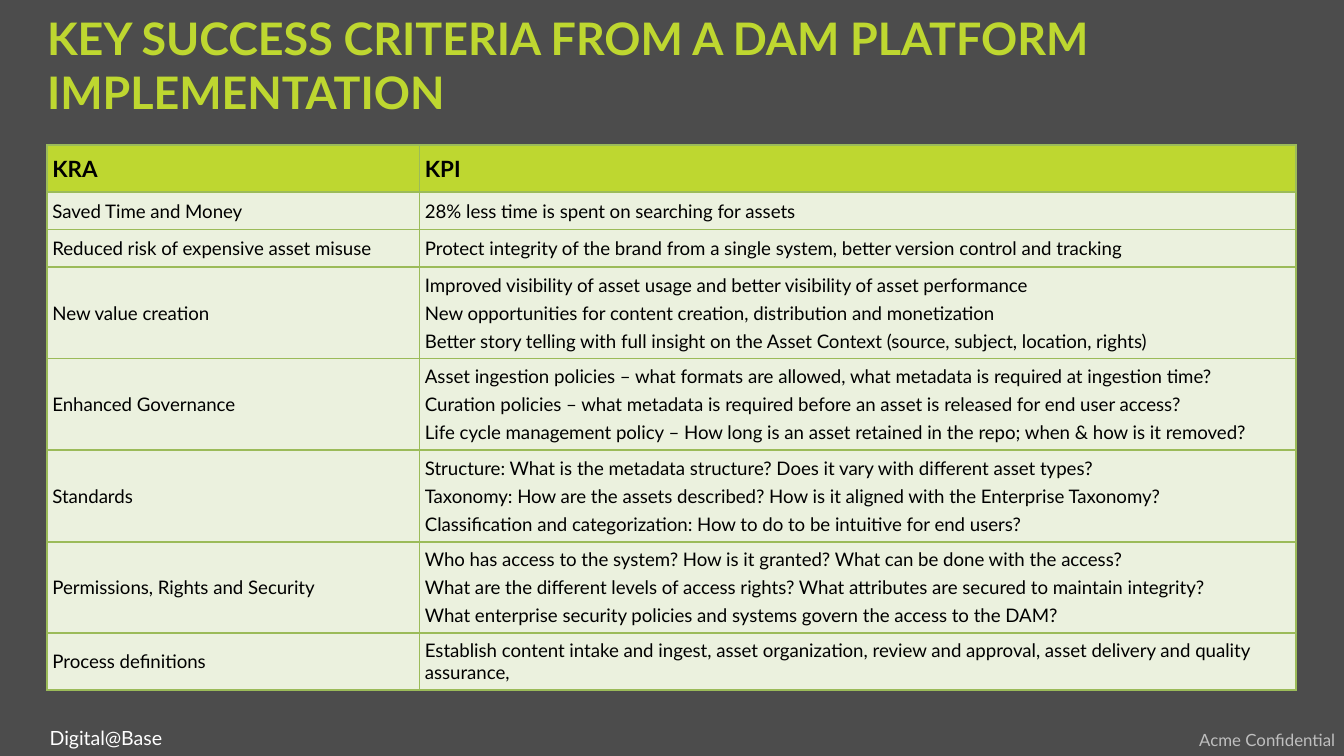
import pptx
import pptx.dml.color
import pptx.enum.shapes
import pptx.enum.text
import pptx.oxml
import pptx.oxml.ns
import pptx.util
from pptx.util import Cm

ALIGN = pptx.enum.text.PP_ALIGN
ANCHOR = pptx.enum.text.MSO_ANCHOR
WIDTH, HEIGHT = 25.4, 14.29
LIME, PALE, BORDER = "BED730", "EBF1DE", "9BBB59"


def color(code):
    return pptx.dml.color.RGBColor.from_string(code)


def xml(text):
    return pptx.oxml.parse_xml(text.replace(">", " " + pptx.oxml.ns.nsdecls("a") + ">", 1))


class Painter:
    """Holds the style and the current slide."""

    font = "Lato"

    def __init__(self, page):
        self.page = page

    def style(self, para, size, code, bold=False, align=ALIGN.LEFT):
        para.alignment = align
        para.font.name = self.font
        para.font.size = pptx.util.Pt(size)
        para.font.bold = bold
        para.font.color.rgb = color(code)

    def backdrop(self, code, opacity):
        shape = self.page.shapes.add_shape(
            pptx.enum.shapes.MSO_SHAPE.RECTANGLE, 0, 0, Cm(WIDTH), Cm(HEIGHT))
        shape.shadow.inherit = False
        shape.line.fill.background()
        shape.fill.solid()
        shape.fill.fore_color.rgb = color(code)
        tint = shape.fill._xPr.find(".//" + pptx.oxml.ns.qn("a:srgbClr"))
        tint.append(xml(f'<a:alpha val="{opacity * 1000}"></a:alpha>'))

    def text(self, words, left, top, width, height, size, code,
             bold=False, align=ALIGN.LEFT, anchor=ANCHOR.TOP, inset=0.25):
        box = self.page.shapes.add_textbox(Cm(left), Cm(top), Cm(width), Cm(height))
        frame = box.text_frame
        frame.word_wrap = True
        frame.vertical_anchor = anchor
        frame.margin_left = Cm(inset)
        para = frame.paragraphs[0]
        para.text = words
        self.style(para, size, code, bold, align)

    def cell(self, cell, lines, fill, size, bold=False, after=0):
        cell.vertical_anchor = ANCHOR.MIDDLE
        cell.margin_left = cell.margin_right = Cm(0.1)
        cell.margin_top = cell.margin_bottom = Cm(0.1)
        cell.text = "\n".join(lines)
        for para in cell.text_frame.paragraphs:
            self.style(para, size, "000000", bold)
            para.space_after = pptx.util.Pt(after)
        # Borders come before the fill in the cell properties
        properties = cell._tc.get_or_add_tcPr()
        for side in ("lnL", "lnR", "lnT", "lnB"):
            properties.append(xml(
                f'<a:{side} w="12700"><a:solidFill><a:srgbClr val="{BORDER}"/>'
                f'</a:solidFill></a:{side}>'))
        cell.fill.solid()
        cell.fill.fore_color.rgb = color(fill)

    def table(self, header, rows, left, top, widths, heights):
        table = self.page.shapes.add_table(
            len(heights), len(widths), Cm(left), Cm(top),
            Cm(sum(widths)), Cm(sum(heights))).table
        for column, width in zip(table.columns, widths):
            column.width = Cm(width)
        for row, height in zip(table.rows, heights):
            row.height = Cm(height)
        for index, label in enumerate(header):
            self.cell(table.cell(0, index), [label], LIME, 12, bold=True)
        for index, (area, indicators) in enumerate(rows, 1):
            self.cell(table.cell(index, 0), [area], PALE, 10)
            after = 3 if heights[index] > 1 else 0
            self.cell(table.cell(index, 1), indicators, PALE, 10, after=after)


CRITERIA = [
    ("Saved Time and Money", ["28% less time is spent on searching for assets"]),
    ("Reduced risk of expensive asset misuse", [
        "Protect integrity of the brand from a single system, better version control and tracking"]),
    ("New value creation", [
        "Improved visibility of asset usage and better visibility of asset performance",
        "New opportunities for content creation, distribution and monetization",
        "Better story telling with full insight on the Asset Context (source, subject, location, rights)"]),
    ("Enhanced Governance", [
        "Asset ingestion policies – what formats are allowed, what metadata is required at ingestion time?",
        "Curation policies – what metadata is required before an asset is released for end user access?",
        "Life cycle management policy – How long is an asset retained in the repo; when & how is it removed?"]),
    ("Standards", [
        "Structure: What is the metadata structure? Does it vary with different asset types?",
        "Taxonomy: How are the assets described? How is it aligned with the Enterprise Taxonomy?",
        "Classification and categorization: How to do to be intuitive for end users?"]),
    ("Permissions, Rights and Security", [
        "Who has access to the system? How is it granted? What can be done with the access?",
        "What are the different levels of access rights? What attributes are secured to maintain integrity?",
        "What enterprise security policies and systems govern the access to the DAM?"]),
    ("Process definitions", [
        "Establish content intake and ingest, asset organization, review and approval, "
        "asset delivery and quality assurance,"]),
]


def main():
    deck = pptx.Presentation()
    deck.slide_width, deck.slide_height = Cm(WIDTH), Cm(HEIGHT)
    painter = Painter(deck.slides.add_slide(deck.slide_layouts[6]))

    # Backdrop and footer
    painter.backdrop("000000", 70)
    painter.text("Digital@Base", 0.69, 13.59, 2.84, 0.7, 10.5, "FFFFFF")
    painter.text("Acme Confidential", 20.78, 13.67, 4.7, 0.64, 9, "BFBFBF", align=ALIGN.RIGHT)

    # Title
    painter.text("KEY SUCCESS CRITERIA FROM A DAM PLATFORM IMPLEMENTATION",
                 0.89, 0.58, 23.6, 1.27, 24, LIME, bold=True,
                 anchor=ANCHOR.MIDDLE, inset=0)

    # Result areas and their indicators
    painter.table(["KRA", "KPI"], CRITERIA, 0.89, 2.74, [7.04, 16.56],
                  [0.89] + [0.71] * 2 + [1.73] * 4 + [1.07])

    deck.save("out.pptx")


if __name__ == "__main__":
    main()
